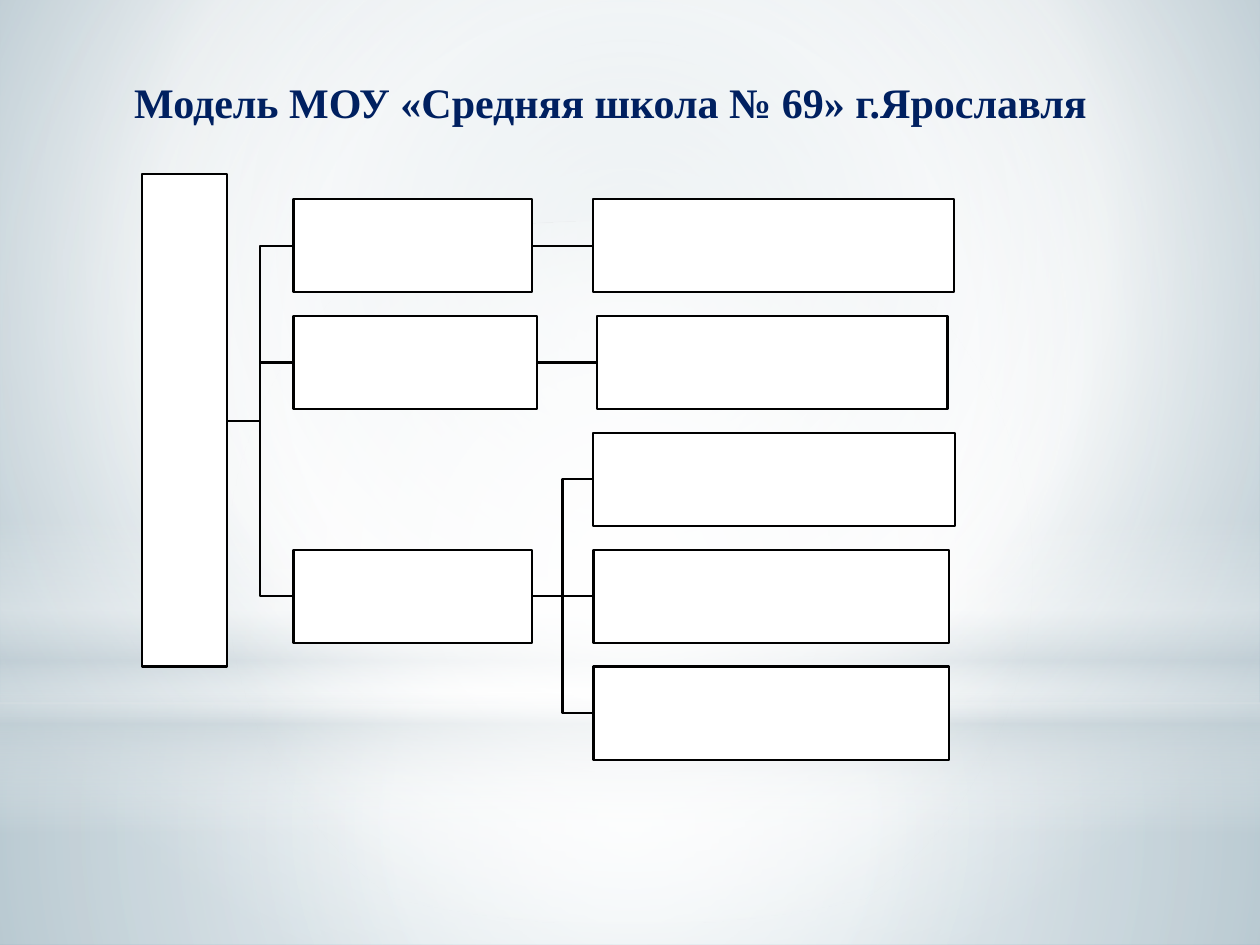
from lxml import etree
from pptx import Presentation
from pptx.dml.color import RGBColor
from pptx.enum import shapes, text
from pptx.oxml import ns
from pptx.util import Inches, Pt

NAVY = RGBColor(0x00, 0x20, 0x60)
BLACK = RGBColor(0x00, 0x00, 0x00)
WHITE = RGBColor(0xFF, 0xFF, 0xFF)
MIST = RGBColor(0xC5, 0xD1, 0xD7)
PALE_BLUE = RGBColor(0xB8, 0xCA, 0xD3)
STEEL = RGBColor(0x8F, 0xAE, 0xBD)

CENTRE = (50, 50, 50, 50)
ROW_TOP, ROW_PITCH, BOX_HEIGHT = 1.58, (5.29 - 1.58) / 4, 0.74
# One entry per branch: row, left, width, then its leaves in the same form.
BRANCHES = [
    ((0, 2.33, 1.89), [(0, 4.71, 2.86)]),
    ((1, 2.33, 1.93), [(1, 4.74, 2.78)]),
    ((3, 2.33, 1.89), [(2, 4.71, 2.87), (3, 4.71, 2.82), (4, 4.71, 2.82)]),
]


def set_gradient(fill, owner, stops, focus=None):
    """Fill with (position, colour, opacity) stops: circular around focus, or top to bottom."""
    fill.gradient()
    gradient = owner.xpath(".//a:gradFill")[0]
    for child in list(gradient):
        gradient.remove(child)

    def add(parent, tag, **attributes):
        return etree.SubElement(parent, ns.qn(tag), attributes)

    stop_list = add(gradient, "a:gsLst")
    for position, colour, opacity in stops:
        stop = add(stop_list, "a:gs", pos=str(position * 1000))
        tint = add(stop, "a:srgbClr", val=str(colour))
        if opacity < 100:
            add(tint, "a:alpha", val=str(opacity * 1000))
    if focus:
        sides = {side: str(share * 1000) for side, share in zip("ltrb", focus)}
        add(add(gradient, "a:path", path="circle"), "a:fillToRect", **sides)
    else:
        add(gradient, "a:lin", ang="5400000", scaled="0")


def add_backdrop(page):
    set_gradient(page.background.fill, page._element,
                 [(0, PALE_BLUE, 100), (60, WHITE, 100), (100, STEEL, 100)],
                 (20, 10, 20, 60))
    rectangle, oval = shapes.MSO_SHAPE.RECTANGLE, shapes.MSO_SHAPE.OVAL
    layers = [
        (rectangle, 5.58, 1.92, [(0, WHITE, 91), (37, WHITE, 76), (100, MIST, 79)], CENTRE),
        (rectangle, 0, 5.58, [(0, WHITE, 89), (48, WHITE, 62), (100, MIST, 79)], CENTRE),
        (rectangle, 4.12, 2.5, [(0, WHITE, 0), (29, WHITE, 30), (45, MIST, 40),
                                (55, WHITE, 26), (65, MIST, 60), (100, WHITE, 0)], None),
        (oval, 1.75, 5.58, [(0, WHITE, 100), (56, WHITE, 0)], CENTRE),
    ]
    for kind, top, height, stops, focus in layers:
        layer = page.shapes.add_shape(kind, 0, Inches(top), Inches(10), Inches(height))
        layer.shadow.inherit = False
        layer.line.fill.background()
        set_gradient(layer.fill, layer._element, stops, focus)


def add_title(page, left, top, width, height):
    box = page.shapes.add_textbox(Inches(left), Inches(top), Inches(width), Inches(height))
    frame = box.text_frame
    frame.word_wrap = True
    frame.margin_top = Inches(0.09)
    frame.text = "Модель МОУ «Средняя школа № 69» г.Ярославля"
    para = frame.paragraphs[0]
    para.alignment = text.PP_ALIGN.CENTER
    font = para.runs[0].font
    font.name, font.size, font.bold = "Times New Roman", Pt(24), True
    font.color.rgb = NAVY


def add_box(page, left, top, width, height):
    box = page.shapes.add_shape(shapes.MSO_SHAPE.RECTANGLE, Inches(left), Inches(top),
                                Inches(width), Inches(height))
    box.shadow.inherit = False
    box.fill.solid()
    box.fill.fore_color.rgb = WHITE
    box.line.color.rgb = BLACK
    box.line.width = Pt(1.25)
    return box


def add_link(page, start, end):
    kinds = shapes.MSO_CONNECTOR
    kind = kinds.STRAIGHT if start[1] == end[1] else kinds.ELBOW
    link = page.shapes.add_connector(kind, *(Inches(n) for n in (*start, *end)))
    link.line.color.rgb = BLACK
    link.line.width = Pt(1.25)
    etree.SubElement(link._element.spPr, ns.qn("a:effectLst"))


def row_middle(row):
    return ROW_TOP + row * ROW_PITCH + BOX_HEIGHT / 2


def add_tree(page):
    """Draw the links first, so that the boxes cover their ends."""
    boxes = []
    for branch, leaves in BRANCHES:
        row, left, width = branch
        add_link(page, (1.8, 3.34), (left, row_middle(row)))
        for leaf_row, leaf_left, _ in leaves:
            add_link(page, (left + width, row_middle(row)), (leaf_left, row_middle(leaf_row)))
        boxes += [branch, *leaves]
    root = add_box(page, -0.49, 3, 3.91, 0.67)
    root.rotation = 270
    for row, left, width in boxes:
        add_box(page, left, ROW_TOP + row * ROW_PITCH, width, BOX_HEIGHT)


def main():
    deck = Presentation()
    deck.slide_width, deck.slide_height = Inches(10), Inches(7.5)
    page = deck.slides.add_slide(deck.slide_layouts[6])
    add_backdrop(page)
    add_title(page, 0.28, 0.52, 9.13, 0.71)
    add_tree(page)
    deck.save("out.pptx")


if __name__ == "__main__":
    main()
